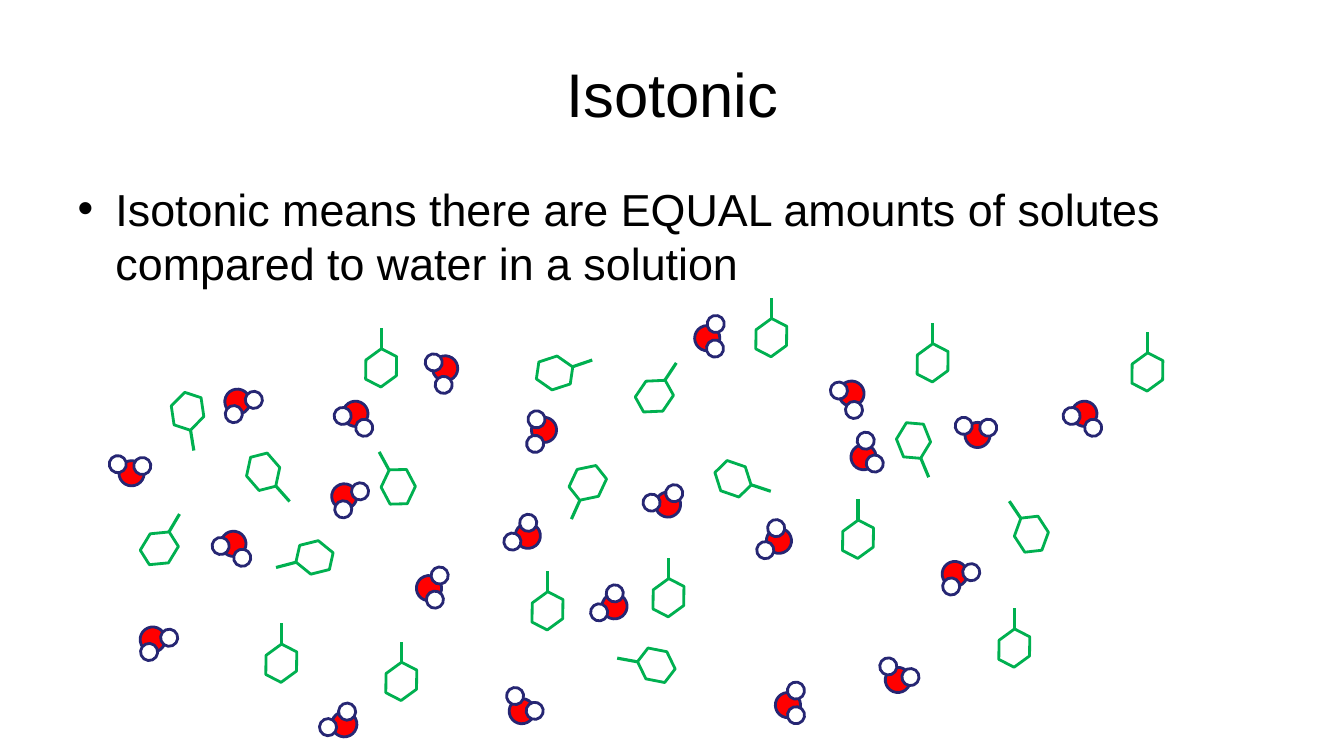
from dataclasses import dataclass
from math import cos, radians, sin

from lxml.etree import SubElement
from pptx import Presentation
from pptx.dml.color import RGBColor as RGB
from pptx.enum.shapes import MSO_CONNECTOR as CONN, MSO_SHAPE as SHAPE
from pptx.enum.text import MSO_ANCHOR, MSO_AUTO_SIZE, PP_ALIGN
from pptx.oxml.ns import qn
from pptx.util import Inches, Pt


@dataclass(frozen=True)
class Theme:
    font: str = "Arial"
    title_size: float = 44
    body_size: float = 32
    outline: float = 2
    bond_width: float = 2.25
    text: RGB = RGB(0, 0, 0)
    white: RGB = RGB(255, 255, 255)
    oxygen: RGB = RGB(255, 0, 0)
    atom_line: RGB = RGB(0x26, 0x26, 0x73)
    solute: RGB = RGB(0, 0xB0, 0x50)


@dataclass(frozen=True)
class Molecule:
    """Centre in grid columns and rows, turned clockwise in degrees."""
    col: float
    row: float
    turn: float

    def point(self, dx: float, dy: float, turn: float) -> tuple[float, float]:
        """Grid point at an offset from the centre, after turning."""
        c, si = cos(radians(turn)), sin(radians(turn))
        return self.col + dx * c - dy * si, self.row + dx * si + dy * c


THEME = Theme()
CELL = 0.1  # grid cell side in inches

# Molecule geometry in grid cells
OXYGEN_SIZE, HYDROGEN_SIZE, RING_SIZE = 2.5, 1.7, 3.4
HYDROGENS = [(-1.2, 0.45), (1.12, 1.2)]
BOND_START, BOND_END = 1.9, 3.95
RING_UPRIGHT = 27.3  # ring turn at which its bond points straight up

WATERS = [Molecule(*m) for m in [
    (15.15, 63.45, 306.7), (23.55, 39.85, 306.7), (89.05, 67.45, 187.8),
    (94.7, 56.95, 306.7), (84.45, 39.05, 34.2), (44.15, 36.55, 48.2),
    (51.75, 70.55, 199.1), (53.95, 42.65, 75.4), (23.15, 53.95, 10.8),
    (35.25, 41.05, 10.8), (78.15, 69.95, 251.9), (107.55, 41.05, 10.8),
    (77.25, 53.65, 98.4), (52.35, 53.15, 112.3), (42.55, 58.35, 263.2),
    (66.25, 50.05, 139.5), (13.05, 46.95, 166.4), (96.95, 43.15, 166.4),
    (70.15, 33.55, 253.9), (34.15, 49.25, 295.1), (60.95, 60.15, 111.6),
    (85.65, 45.35, 230.5), (34.15, 71.85, 122.9),
]]
SOLUTES = [Molecule(*m) for m in [
    (72.7, 47.5, 135.6), (37.8, 36.5, 27.3), (39.8, 67.6, 27.3),
    (31.2, 55.3, 282.6), (113.8, 36.9, 27.3), (100.6, 64.3, 27.3),
    (66.3, 59.3, 27.3), (15.8, 54.4, 57.8), (76.5, 33.5, 27.3),
    (102.3, 53, 353.5), (26.1, 46.8, 165.6), (55, 37, 98.4),
    (92.5, 36, 27.3), (18.6, 40.8, 198.2), (39.5, 48.3, 358.7),
    (54.3, 60.6, 27.3), (58.3, 47.9, 231.6), (90.6, 43.7, 184.8),
    (27.9, 65.8, 27.3), (85.1, 53.5, 27.3), (65.1, 66, 307.6),
    (64.9, 39.3, 60.8),
]]


def grid(cells: float) -> int:
    return Inches(cells * CELL)


def add_part(shapes, kind: SHAPE, centre: tuple[float, float], size: float,
             turn: float, fill: RGB, line: RGB) -> None:
    left, top = (grid(v - size / 2) for v in centre)
    sp = shapes.add_shape(kind, left, top, grid(size), grid(size))
    sp.rotation = turn
    sp.shadow.inherit = False
    sp.fill.solid()
    sp.fill.fore_color.rgb = fill
    sp.line.color.rgb = line
    sp.line.width = Pt(THEME.outline)


def add_water(s, m: Molecule) -> None:
    shapes = s.shapes.add_group_shape().shapes
    add_part(shapes, SHAPE.OVAL, (m.col, m.row), OXYGEN_SIZE, m.turn,
             THEME.oxygen, THEME.atom_line)
    for dx, dy in HYDROGENS:
        add_part(shapes, SHAPE.OVAL, m.point(dx, dy, m.turn), HYDROGEN_SIZE,
                 m.turn, THEME.white, THEME.atom_line)


def add_solute(s, m: Molecule) -> None:
    shapes = s.shapes.add_group_shape().shapes
    add_part(shapes, SHAPE.HEXAGON, (m.col, m.row), RING_SIZE, m.turn,
             THEME.white, THEME.solute)
    ends = [grid(v) for reach in (BOND_START, BOND_END)
            for v in m.point(0, -reach, m.turn - RING_UPRIGHT)]
    bond = shapes.add_connector(CONN.STRAIGHT, *ends)
    bond.line.color.rgb = THEME.solute
    bond.line.width = Pt(THEME.bond_width)
    SubElement(bond._element.spPr, qn("a:effectLst"))


def fill_placeholder(sp, box: tuple[float, ...], text: str, size: float,
                     align: PP_ALIGN, anchor: MSO_ANCHOR) -> None:
    sp.left, sp.top, sp.width, sp.height = (grid(v) for v in box)
    tf = sp.text_frame
    tf.auto_size = MSO_AUTO_SIZE.NONE
    tf.vertical_anchor = anchor
    p = tf.paragraphs[0]
    p.alignment = align
    r = p.add_run()
    r.text = text
    r.font.name = THEME.font
    r.font.size = Pt(size)
    r.font.color.rgb = THEME.text


def main() -> None:
    prs = Presentation()
    prs.slide_width, prs.slide_height = Inches(13.33), Inches(7.5)
    s = prs.slides.add_slide(prs.slide_layouts[1])

    # Title and definition
    fill_placeholder(s.shapes.title, (6.7, 3, 120, 12.5), "Isotonic",
                     THEME.title_size, PP_ALIGN.CENTER, MSO_ANCHOR.MIDDLE)
    fill_placeholder(s.placeholders[1], (6.7, 17.5, 120, 49.5),
                     "Isotonic means there are EQUAL amounts of solutes "
                     "compared to water in a solution",
                     THEME.body_size, PP_ALIGN.LEFT, MSO_ANCHOR.TOP)

    # Molecules of the solution
    for m in WATERS:
        add_water(s, m)
    for m in SOLUTES:
        add_solute(s, m)

    prs.save("out.pptx")


if __name__ == "__main__":
    main()
